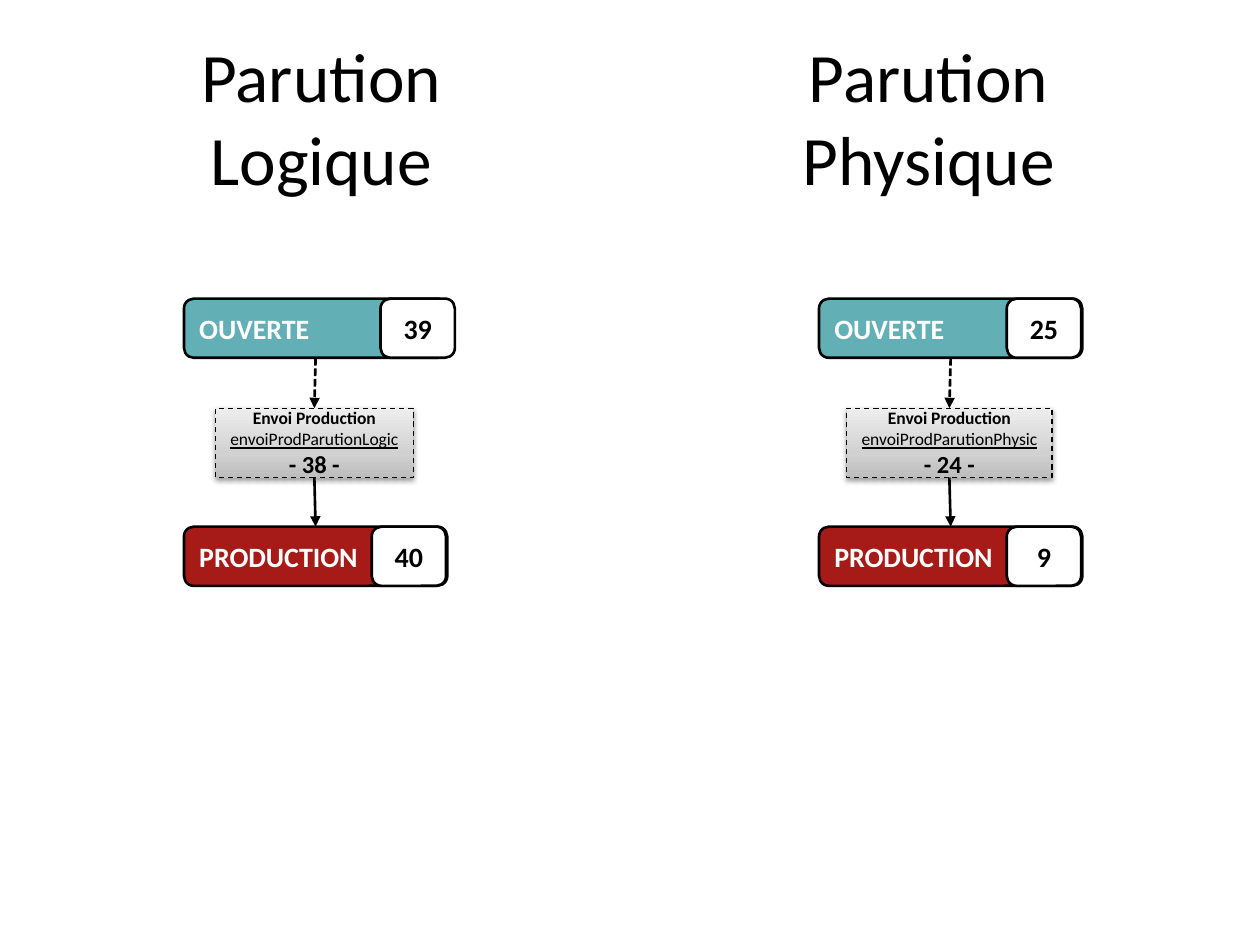
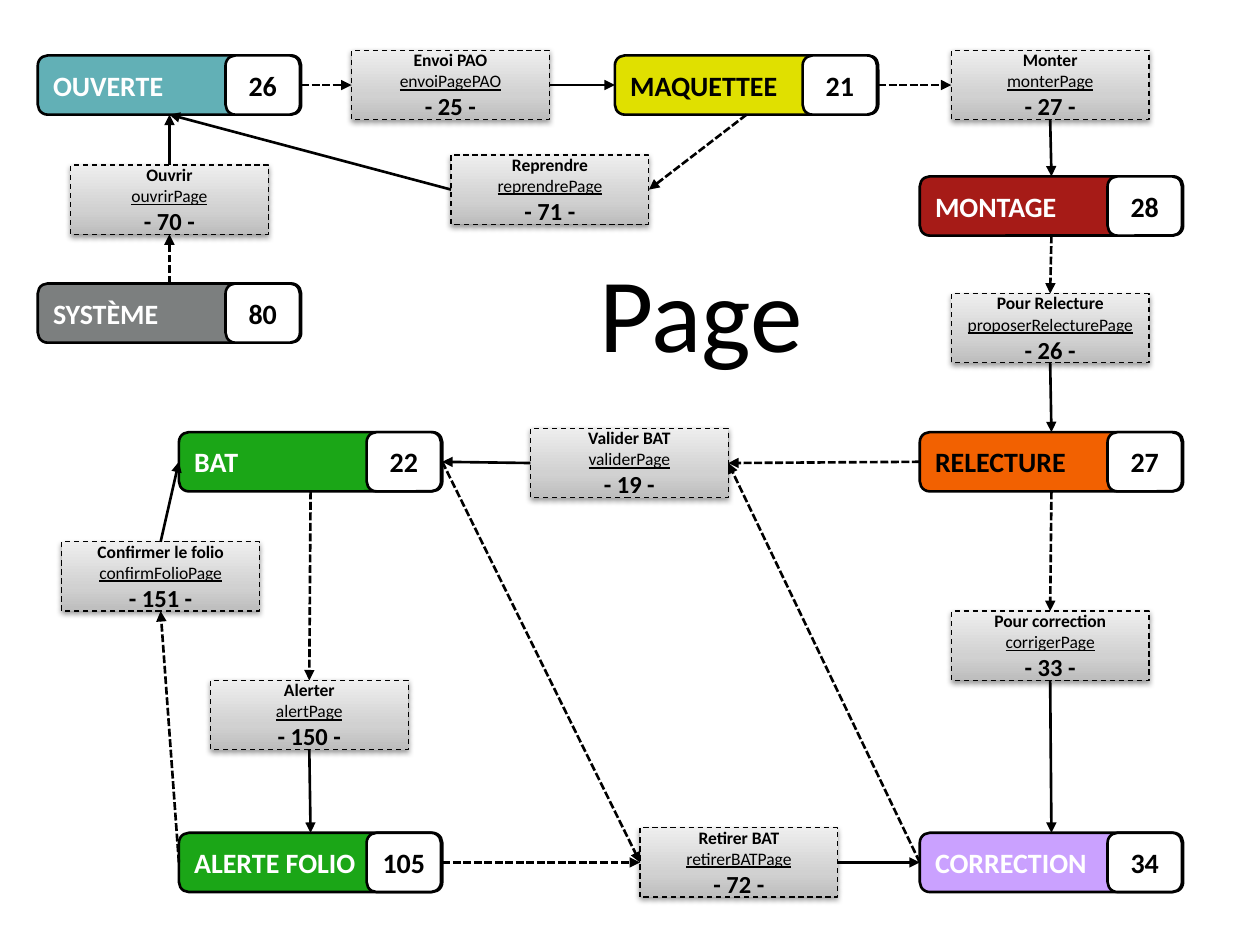
"""Builds two slides of workflow diagrams: issue states and page states."""
from dataclasses import dataclass

from lxml.etree import SubElement
from pptx import Presentation
from pptx.dml.color import RGBColor
from pptx.enum.dml import MSO_LINE
from pptx.enum.shapes import MSO_CONNECTOR, MSO_SHAPE
from pptx.enum.text import MSO_ANCHOR, PP_ALIGN
from pptx.oxml.ns import qn
from pptx.util import Inches, Pt


@dataclass(frozen=True)
class Theme:
    font: str = "Calibri"
    black: str = "000000"
    white: str = "FFFFFF"
    teal: str = "62B0B6"
    red: str = "A61B17"
    grey: str = "7C7F7F"
    green: str = "1BA617"
    yellow: str = "E0E000"
    orange: str = "F26101"
    violet: str = "CAA1FF"
    action_stops: tuple = ((0, "BDBDBD"), (35, "D1D1D1"), (100, "EEEEEE"))
    title_size: float = 39.6
    page_title_size: float = 60
    state_size: float = 16
    action_size: float = 10
    code_size: float = 14
    state_line: float = 1.5
    action_line: float = 0.75


theme = Theme()
STATE_W, STATE_H = 2.09, 0.47
BADGE_W, BADGE_OFFSET = 0.59, 1.49
ACTION_W, ACTION_H = 1.57, 0.55
TOP, LEFT, BOTTOM, RIGHT = range(4)


def write(frame, lines, color, align=PP_ALIGN.CENTER):
    frame.word_wrap = True
    frame.vertical_anchor = MSO_ANCHOR.MIDDLE
    for index, (text, size, bold, underline) in enumerate(lines):
        paragraph = frame.add_paragraph() if index else frame.paragraphs[0]
        paragraph.alignment = align
        run = paragraph.add_run()
        run.text = text
        run.font.name = theme.font
        run.font.size = Pt(size)
        run.font.bold = bold
        run.font.underline = underline
        run.font.color.rgb = RGBColor.from_string(color)


def add_box(slide, kind, x, y, width, height, fill, line_width):
    box = slide.shapes.add_shape(kind, Inches(x), Inches(y), Inches(width), Inches(height))
    box.shadow.inherit = False
    if fill:
        box.fill.solid()
        box.fill.fore_color.rgb = RGBColor.from_string(fill)
    box.line.color.rgb = RGBColor.from_string(theme.black)
    box.line.width = Pt(line_width)
    return box


issue_diagram = {
    "titles": [
        (("Parution", "Logique"), theme.title_size, 1.05, 0.3, 3, 1.25),
        (("Parution", "Physique"), theme.title_size, 5.87, 0.3, 3, 1.25),
    ],
    "states": [
        ("logic_open", "OUVERTE", "39", 1.46, 2.37, theme.teal, theme.white, 1.56),
        ("logic_prod", "PRODUCTION", "40", 1.46, 4.18, theme.red, theme.white, BADGE_OFFSET),
        ("physic_open", "OUVERTE", "25", 6.5, 2.37, theme.teal, theme.white, BADGE_OFFSET),
        ("physic_prod", "PRODUCTION", "9", 6.5, 4.18, theme.red, theme.white, BADGE_OFFSET),
    ],
    "actions": [
        ("Envoi Production", "envoiProdParutionLogic", 38, 1.71, 3.24, ACTION_W),
        ("Envoi Production", "envoiProdParutionPhysic", 24, 6.72, 3.24, 1.63),
    ],
    "links": [
        ("logic_open", BOTTOM, 38, TOP),
        (38, BOTTOM, "logic_prod", TOP),
        ("physic_open", BOTTOM, 24, TOP),
        (24, BOTTOM, "physic_prod", TOP),
    ],
}

page_diagram = {
    "titles": [(("Page",), theme.page_title_size, 4.45, 1.97, 2.23, 0.99)],
    "states": [
        (label, label, number, x, y, fill, ink, BADGE_OFFSET)
        for label, number, x, y, fill, ink in [
            ("OUVERTE", "26", 0.3, 0.44, theme.teal, theme.white),
            ("SYSTÈME", "80", 0.3, 2.25, theme.grey, theme.white),
            ("MAQUETTEE", "21", 4.88, 0.44, theme.yellow, theme.black),
            ("MONTAGE", "28", 7.3, 1.4, theme.red, theme.white),
            ("RELECTURE", "27", 7.3, 3.43, theme.orange, theme.black),
            ("CORRECTION", "34", 7.3, 6.61, theme.violet, theme.white),
            ("BAT", "22", 1.42, 3.43, theme.green, theme.white),
            ("ALERTE FOLIO", "105", 1.42, 6.61, theme.green, theme.white),
        ]
    ],
    "actions": [
        (label, function, code, x, y, ACTION_W)
        for label, function, code, x, y in [
            ("Ouvrir", "ouvrirPage", 70, 0.56, 1.31),
            ("Envoi PAO", "envoiPagePAO", 25, 2.79, 0.4),
            ("Reprendre", "reprendrePage", 71, 3.58, 1.23),
            ("Monter", "monterPage", 27, 7.55, 0.4),
            ("Pour Relecture", "proposerRelecturePage", 26, 7.55, 2.33),
            ("Pour correction", "corrigerPage", 33, 7.55, 4.85),
            ("Valider BAT", "validerPage", 19, 4.21, 3.4),
            ("Retirer BAT", "retirerBATPage", 72, 5.08, 6.57),
            ("Alerter", "alertPage", 150, 1.67, 5.4),
            ("Confirmer le folio", "confirmFolioPage", 151, 0.49, 4.3),
        ]
    ],
    "links": [
        ("SYSTÈME", TOP, 70, BOTTOM),
        (70, TOP, "OUVERTE", BOTTOM),
        ("OUVERTE", RIGHT, 25, LEFT),
        (25, RIGHT, "MAQUETTEE", LEFT),
        ("MAQUETTEE", BOTTOM, 71, RIGHT),
        (71, LEFT, "OUVERTE", BOTTOM),
        ("MAQUETTEE", RIGHT, 27, LEFT),
        (27, BOTTOM, "MONTAGE", TOP),
        ("MONTAGE", BOTTOM, 26, TOP),
        (26, BOTTOM, "RELECTURE", TOP),
        ("RELECTURE", BOTTOM, 33, TOP),
        (33, BOTTOM, "CORRECTION", TOP),
        ("RELECTURE", LEFT, 19, RIGHT),
        ("CORRECTION", LEFT, 19, RIGHT),
        (19, LEFT, "BAT", RIGHT),
        ("BAT", RIGHT, 72, LEFT),
        ("ALERTE FOLIO", RIGHT, 72, LEFT),
        (72, RIGHT, "CORRECTION", LEFT),
        ("BAT", BOTTOM, 150, TOP),
        (150, BOTTOM, "ALERTE FOLIO", TOP),
        ("ALERTE FOLIO", LEFT, 151, BOTTOM),
        (151, TOP, "BAT", LEFT),
    ],
}

presentation = Presentation()
presentation.slide_width = Inches(10)
presentation.slide_height = Inches(7.5)

for diagram in (issue_diagram, page_diagram):
    slide = presentation.slides.add_slide(presentation.slide_layouts[6])
    steps = {}

    for words, size, x, y, width, height in diagram["titles"]:
        title = slide.shapes.add_textbox(Inches(x), Inches(y), Inches(width), Inches(height))
        write(title.text_frame, [(word, size, False, False) for word in words], theme.black)

    for key, label, number, x, y, fill, ink, offset in diagram["states"]:
        state = add_box(slide, MSO_SHAPE.ROUNDED_RECTANGLE, x, y, STATE_W, STATE_H,
                        fill, theme.state_line)
        write(state.text_frame, [(label, theme.state_size, True, False)], ink, PP_ALIGN.LEFT)
        steps[key] = state

    for label, function, code, x, y, width in diagram["actions"]:
        action = add_box(slide, MSO_SHAPE.RECTANGLE, x, y, width, ACTION_H,
                         None, theme.action_line)
        action.line.dash_style = MSO_LINE.DASH
        action.fill.gradient()
        action.fill.gradient_angle = 90
        properties = action._element.spPr
        stops = properties.find(qn("a:gradFill")).find(qn("a:gsLst"))
        for stop in list(stops):
            stops.remove(stop)
        for position, color in theme.action_stops:
            stop = SubElement(stops, qn("a:gs"), pos=str(position * 1000))
            SubElement(stop, qn("a:srgbClr"), val=color)
        shadow = SubElement(properties.find(qn("a:effectLst")), qn("a:outerShdw"),
                            blurRad="40000", dist="20000", dir="5400000", rotWithShape="0")
        shadow_color = SubElement(shadow, qn("a:srgbClr"), val=theme.black)
        SubElement(shadow_color, qn("a:alpha"), val="38000")
        write(action.text_frame, [
            (label, theme.action_size, True, False),
            (function, theme.action_size, False, True),
            (f"- {code} -", theme.code_size, True, False),
        ], theme.black)
        steps[code] = action

    for source, source_side, target, target_side in diagram["links"]:
        link = slide.shapes.add_connector(MSO_CONNECTOR.STRAIGHT, 0, 0, 0, 0)
        link.begin_connect(steps[source], source_side)
        link.end_connect(steps[target], target_side)
        link.line.color.rgb = RGBColor.from_string(theme.black)
        link.line.width = Pt(theme.state_line)
        if isinstance(source, str):
            link.line.dash_style = MSO_LINE.SQUARE_DOT
        properties = link._element.spPr
        SubElement(properties.find(qn("a:ln")), qn("a:tailEnd"), type="triangle")
        SubElement(properties, qn("a:effectLst"))

    for key, label, number, x, y, fill, ink, offset in diagram["states"]:
        badge = add_box(slide, MSO_SHAPE.ROUNDED_RECTANGLE, x + offset, y, BADGE_W, STATE_H,
                        theme.white, theme.state_line)
        write(badge.text_frame, [(number, theme.state_size, True, False)], theme.black)

presentation.save("out.pptx")
